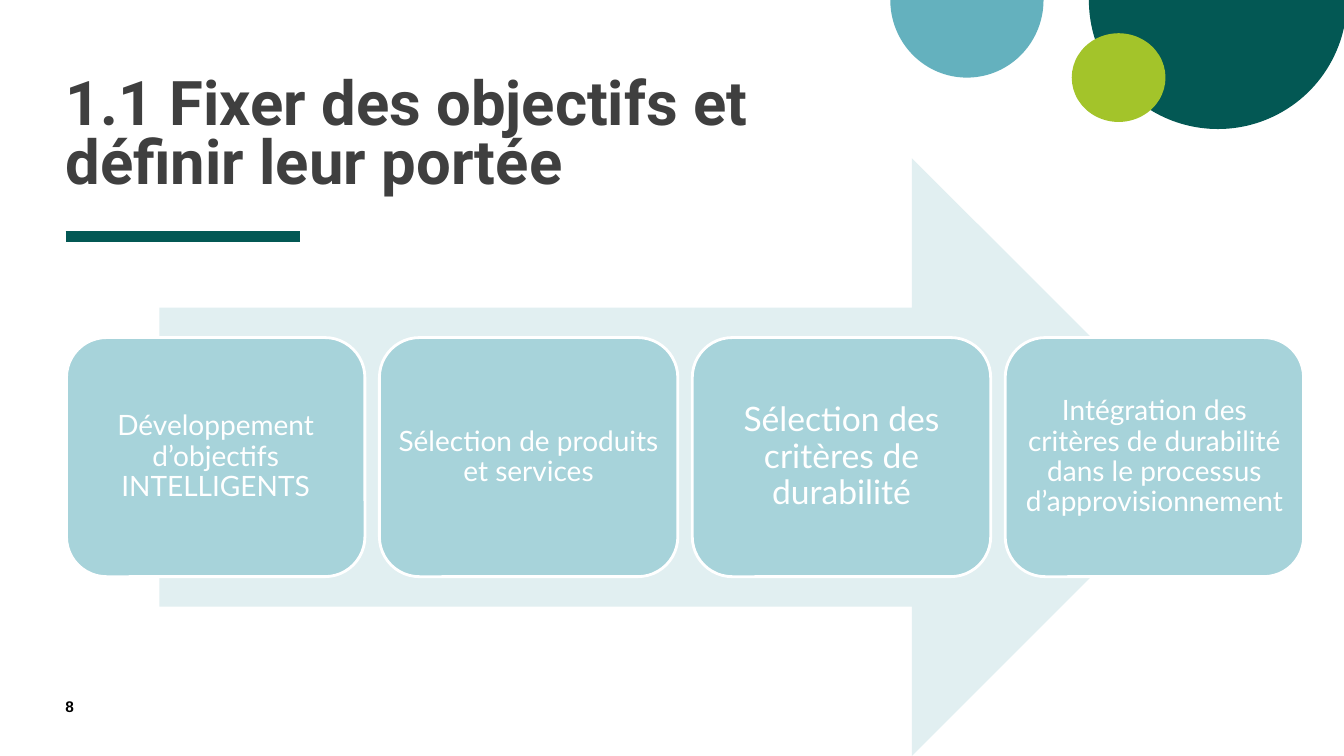
import pptx
import pptx.dml.color
import pptx.enum.shapes
import pptx.enum.text
import pptx.oxml.ns
import pptx.util
from pptx.util import Inches

RGBColor = pptx.dml.color.RGBColor
Shapes = pptx.enum.shapes.MSO_SHAPE
Align = pptx.enum.text.PP_ALIGN
Anchor = pptx.enum.text.MSO_ANCHOR

DARK_GREEN = RGBColor(0x03, 0x58, 0x54)
BLUE = RGBColor(0x64, 0xB1, 0xBE)
LIME = RGBColor(0xA3, 0xC4, 0x2A)
PALE_BLUE = RGBColor(0xE1, 0xEF, 0xF1)
CARD_BLUE = RGBColor(0xA7, 0xD3, 0xDA)
TITLE_GRAY = RGBColor(0x3F, 0x3F, 0x3F)
BLACK = RGBColor(0, 0, 0)
WHITE = RGBColor(255, 255, 255)

STEPS = [
    ("Développement d’objectifs INTELLIGENTS", 20),
    ("Sélection de produits et services", 20),
    ("Sélection des critères de durabilité", 24),
    ("Intégration des critères de durabilité dans le processus d’approvisionnement", 20),
]


def set_attributes(target, values):
    for name, value in values.items():
        setattr(target, name, value)


def add_filled_shape(slide, kind, box, color, adjustments=()):
    """Add a borderless shape in a box of left, top, width, height in inches."""
    shape = slide.shapes.add_shape(kind, *map(Inches, box))
    shape.shadow.inherit = False
    shape.fill.solid()
    shape.fill.fore_color.rgb = color
    shape.line.fill.background()
    for index, value in enumerate(adjustments):
        shape.adjustments[index] = value
    return shape


def write_text(shape, text, font, color, inset=0, anchor=Anchor.TOP,
               alignment=Align.LEFT, line_spacing=1.0):
    """Fill the shape with one formatted paragraph."""
    frame = shape.text_frame
    margins = ("margin_left", "margin_top", "margin_right", "margin_bottom")
    set_attributes(frame, dict.fromkeys(margins, Inches(inset)))
    set_attributes(frame, {"word_wrap": True, "vertical_anchor": anchor})
    paragraph = frame.paragraphs[0]
    paragraph.text = text
    set_attributes(paragraph, {"alignment": alignment, "line_spacing": line_spacing})
    set_attributes(paragraph.font, font)
    paragraph.font.color.rgb = color


def add_corner_circles(slide, left, top):
    """Place the circles; the first two are lower halves cut by the slide edge."""
    half_turn = (0, 108)
    add_filled_shape(slide, Shapes.PIE, (left + 1.97, top - 1.28, 2.56, 2.56),
                     DARK_GREEN, half_turn)
    add_filled_shape(slide, Shapes.PIE, (left, top - 0.77, 1.52, 1.54), BLUE, half_turn)
    add_filled_shape(slide, Shapes.OVAL, (left + 1.8, top + 0.33, 0.93, 0.88), LIME)


def add_title(slide, left, top, width, height):
    """Place the title with its underline below the box."""
    title = slide.shapes.add_textbox(*map(Inches, (left, top, width, height)))
    write_text(title, "1.1 Fixer des objectifs et définir leur portée",
               {"name": "Roboto", "size": pptx.util.Pt(44), "bold": True},
               TITLE_GRAY, anchor=Anchor.BOTTOM, line_spacing=0.8)
    line_top = Inches(top + height + 0.4)
    underline = slide.shapes.add_connector(
        pptx.enum.shapes.MSO_CONNECTOR.STRAIGHT,
        Inches(left), line_top, Inches(left + 2.33), line_top)
    underline.line.color.rgb = DARK_GREEN
    underline.line.width = pptx.util.Pt(8)
    properties = underline._element.spPr
    properties.append(properties.makeelement(pptx.oxml.ns.qn("a:effectLst"), {}))


def add_page_number(slide, left, top, width, height):
    number = slide.shapes.add_textbox(*map(Inches, (left, top, width, height)))
    write_text(number, "8", {"name": "Arial", "size": pptx.util.Pt(11), "bold": True}, BLACK)


def add_process(slide, left, top, width, height):
    """Place the step cards over an arrow that is 85 % as wide as the box."""
    arrow_width = 0.85 * width
    add_filled_shape(slide, Shapes.RIGHT_ARROW,
                     (left + (width - arrow_width) / 2, top, arrow_width, height),
                     PALE_BLUE, (0.5, 0.5))
    card_width, card_height = 2.96, 0.4 * height
    pitch = (width - card_width) / (len(STEPS) - 1)
    for index, (text, size) in enumerate(STEPS):
        box = (left + index * pitch, top + 0.3 * height, card_width, card_height)
        card = add_filled_shape(slide, Shapes.ROUNDED_RECTANGLE, box, CARD_BLUE, (0.167,))
        card.line.color.rgb = WHITE
        card.line.width = pptx.util.Pt(2)
        write_text(card, text, {"name": "Lato", "size": pptx.util.Pt(size)}, WHITE,
                   inset=0.07, anchor=Anchor.MIDDLE, alignment=Align.CENTER,
                   line_spacing=0.9)


def main():
    presentation = pptx.Presentation()
    presentation.slide_width = Inches(13.33)
    presentation.slide_height = Inches(7.5)
    slide = presentation.slides.add_slide(presentation.slide_layouts[6])
    add_corner_circles(slide, 8.83, 0)
    add_title(slide, 0.65, 0.21, 7.42, 1.74)
    add_page_number(slide, 0.65, 6.92, 0.57, 0.27)
    add_process(slide, 0.66, 1.57, 12.27, 5.93)
    presentation.save("out.pptx")


if __name__ == "__main__":
    main()
